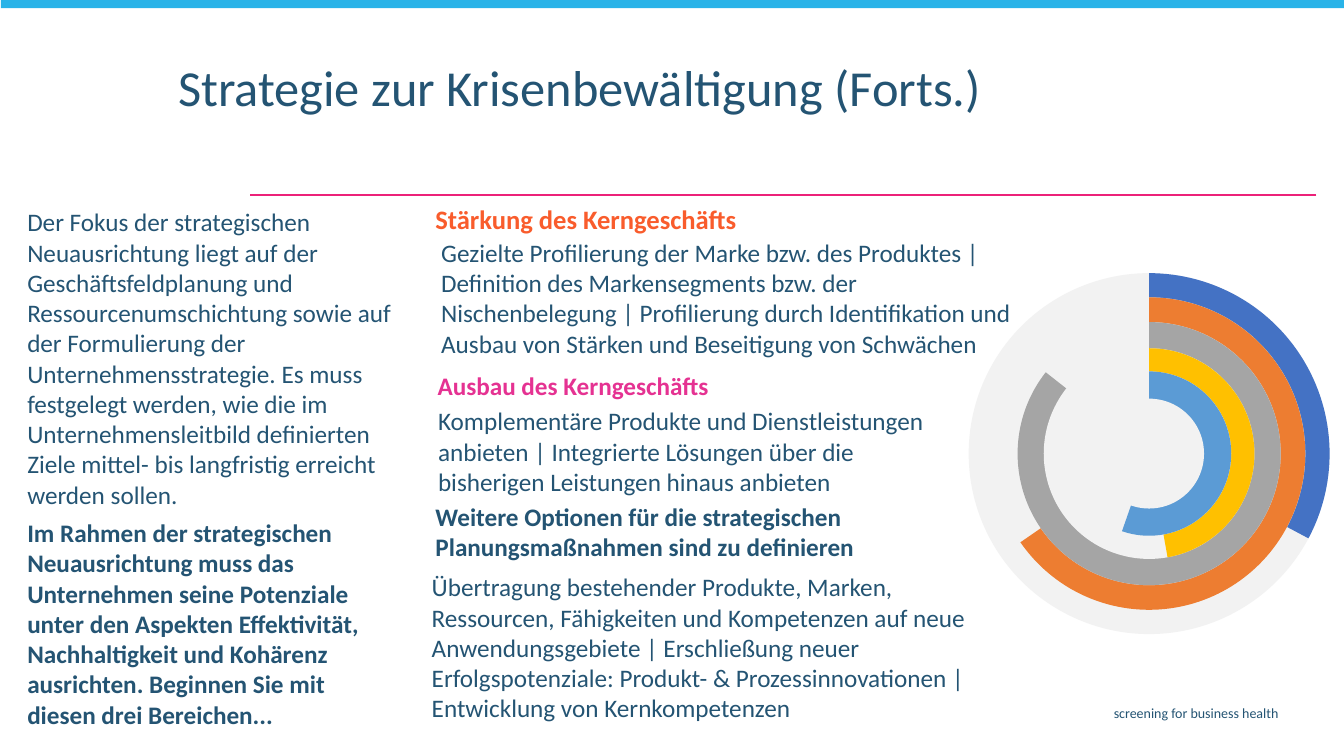
from lxml.etree import SubElement
from pptx import Presentation
from pptx.dml.color import RGBColor
from pptx.enum.shapes import MSO_CONNECTOR, MSO_SHAPE
from pptx.enum.text import MSO_ANCHOR, PP_ALIGN
from pptx.oxml.ns import qn
from pptx.util import Pt

FONT = "Calibri"
NAVY, ORANGE, PINK, MAGENTA = "245473", "F95C2C", "E53292", "EC2179"
SKY, PALE = "29B3E8", "F2F2F2"

INTRO = [
    "Der Fokus der strategischen Neuausrichtung liegt auf der Geschäftsfeldplanung und "
    "Ressourcenumschichtung sowie auf der Formulierung der Unternehmensstrategie. Es muss "
    "festgelegt werden, wie die im Unternehmensleitbild definierten Ziele mittel- bis "
    "langfristig erreicht werden sollen.",
    "Im Rahmen der strategischen Neuausrichtung muss das Unternehmen seine Potenziale unter "
    "den Aspekten Effektivität, Nachhaltigkeit und Kohärenz ausrichten. Beginnen Sie mit "
    "diesen drei Bereichen...",
]

# heading, its box, size, colour, body, its box
SECTIONS = [
    ("Stärkung des Kerngeschäfts", (304, 141, 349, 30), 19, ORANGE,
     "Gezielte Profilierung der Marke bzw. des Produktes | Definition des Markensegments bzw. "
     "der Nischenbelegung | Profilierung durch Identifikation und Ausbau von Stärken und "
     "Beseitigung von Schwächen", (312.2, 168, 428.5, 90)),
    ("Ausbau des Kerngeschäfts", (305.5, 260.5, 241, 29), 18, PINK,
     "Komplementäre Produkte und Dienstleistungen anbieten | Integrierte Lösungen über die "
     "bisherigen Leistungen hinaus anbieten", (310, 288.3, 364, 90)),
    ("Weitere Optionen für die strategischen Planungsmaßnahmen sind zu definieren",
     (304, 353.5, 412, 51), 18, NAVY,
     "Übertragung bestehender Produkte, Marken, Ressourcen, Fähigkeiten und Kompetenzen auf "
     "neue Anwendungsgebiete | Erschließung neuer Erfolgspotenziale: Produkt- & "
     "Prozessinnovationen | Entwicklung von Kernkompetenzen", (305.5, 407, 394.5, 138)),
]

# diameter, end angle in degrees, colour
RINGS = [
    (257.8, 28, "4472C4"),
    (223.2, 145.4, "ED7D31"),
    (187.9, 218.2, "A5A5A5"),
    (150.5, 79.9, "FFC000"),
    (117.4, 109.2, "5B9BD5"),
]
HOLE = 78.5
ADJUSTMENT_PER_DEGREE = 0.6


def color(hex_string):
    return RGBColor.from_string(hex_string)


def add_text(slide, box, paragraphs, size=18, fill=NAVY, insets=(7.2, 3.6), bold=False,
             anchor=MSO_ANCHOR.TOP, alignment=PP_ALIGN.LEFT):
    shape = slide.shapes.add_textbox(*map(Pt, box))
    frame = shape.text_frame
    frame.word_wrap = True
    frame.vertical_anchor = anchor
    frame.margin_left = frame.margin_right = Pt(insets[0])
    frame.margin_top = frame.margin_bottom = Pt(insets[1])
    frame.text = "\n".join(paragraphs)
    for paragraph in frame.paragraphs:
        paragraph.alignment = alignment
        for run in paragraph.runs:
            run.font.name = FONT
            run.font.size = Pt(size)
            run.font.bold = bold
            run.font.color.rgb = color(fill)
    return frame


def add_filled(slide, kind, box, fill):
    shape = slide.shapes.add_shape(kind, *map(Pt, box))
    shape.shadow.inherit = False
    shape.fill.solid()
    shape.fill.fore_color.rgb = color(fill)
    shape.line.fill.background()
    return shape


def add_frame(slide, width):
    # Rule, top bar and footer
    rule = slide.shapes.add_connector(
        MSO_CONNECTOR.STRAIGHT, Pt(width - 19.7), Pt(139), Pt(178.6), Pt(139))
    rule.line.color.rgb = color(MAGENTA)
    rule.line.width = Pt(1.5)
    SubElement(rule.element.spPr, qn("a:effectLst"))
    add_filled(slide, MSO_SHAPE.RECTANGLE, (0.7, -1.4, width, 7.2), SKY)
    add_text(slide, (262.8, 499.7, 657.4, 20.9), ["screening for business health"],
             size=10, alignment=PP_ALIGN.RIGHT)


def add_intro(slide, box):
    frame = add_text(slide, box, INTRO, insets=(6.5, 2.9))
    closing = frame.paragraphs[1]
    closing.space_before = Pt(6)
    closing.runs[0].font.bold = True


def add_rings(slide, box):
    # Each ring is a pie on a pale disc, covered by the next smaller disc
    left, top, side = box

    def centred(diameter):
        offset = (side - diameter) / 2
        return left + offset, top + offset, diameter, diameter

    for diameter, end, fill in RINGS:
        add_filled(slide, MSO_SHAPE.OVAL, centred(diameter), PALE)
        # The preset named PIE is the block pie with start and end angles
        pie = add_filled(slide, MSO_SHAPE.PIE, centred(diameter), fill)
        pie.adjustments[0] = 270 * ADJUSTMENT_PER_DEGREE
        pie.adjustments[1] = end * ADJUSTMENT_PER_DEGREE
    add_filled(slide, MSO_SHAPE.OVAL, centred(HOLE), PALE)


def add_section(slide, heading, heading_box, size, fill, body, body_box):
    add_text(slide, heading_box, [heading], size, fill, bold=True, anchor=MSO_ANCHOR.BOTTOM)
    add_text(slide, body_box, [body], insets=(2.9, 1.4))


def add_title(slide, box):
    frame = add_text(slide, box, ["Strategie zur Krisenbewältigung (Forts.)"], size=36)
    frame.paragraphs[0].line_spacing = 0.9


def main():
    presentation = Presentation()
    presentation.slide_width, presentation.slide_height = Pt(960), Pt(540)
    slide = presentation.slides.add_slide(presentation.slide_layouts[6])
    add_frame(slide, 960)
    add_intro(slide, (13, 144.7, 278.6, 366.5))
    add_rings(slide, (691.9, 195.1, 257.8))
    for section in SECTIONS:
        add_section(slide, *section)
    add_title(slide, (120.2, 41.8, 697, 54.7))
    presentation.save("out.pptx")


if __name__ == "__main__":
    main()
